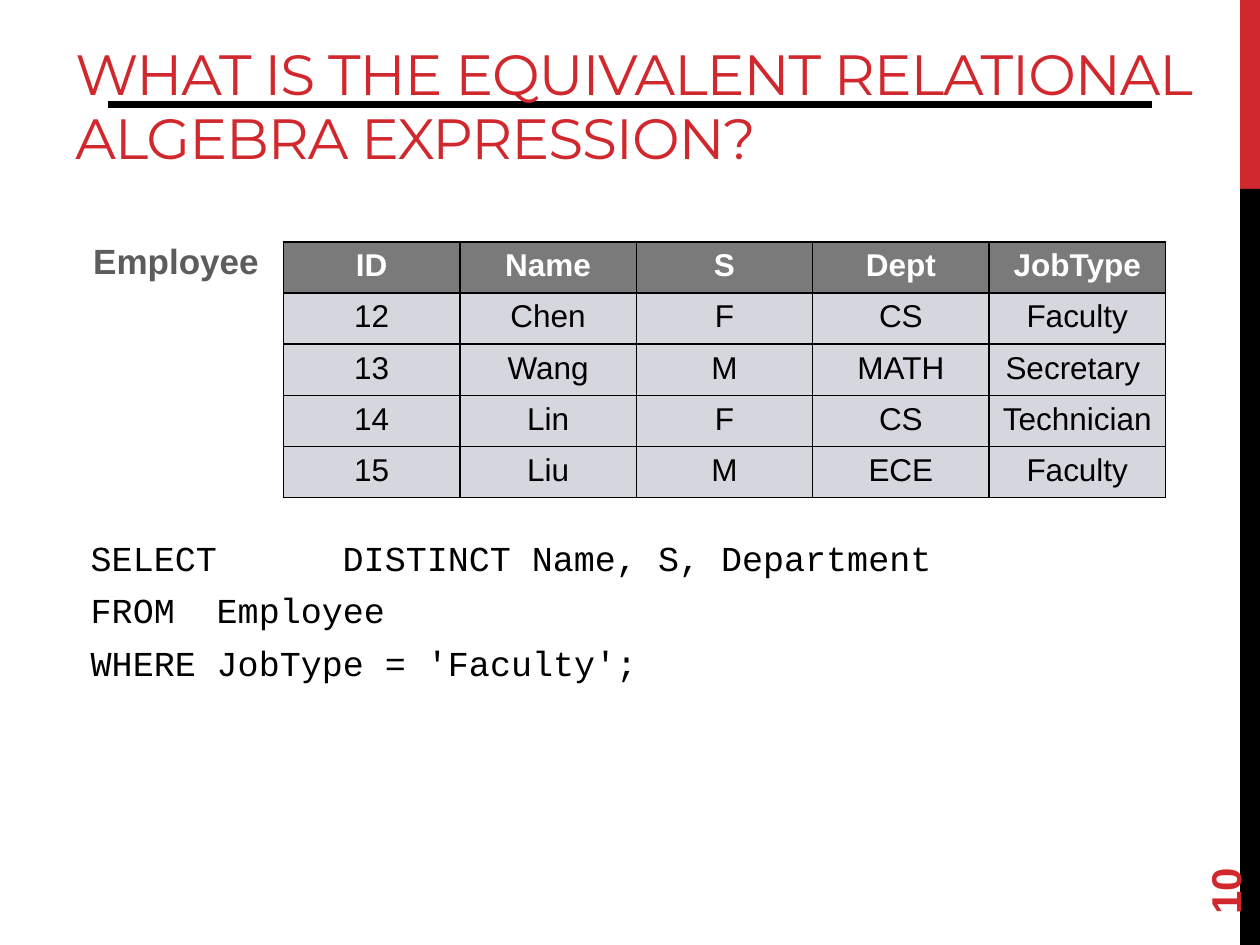
from lxml import etree
from pptx import Presentation
from pptx import util as u
from pptx.dml.color import RGBColor
from pptx.enum import shapes, text
from pptx.oxml import ns

RED = RGBColor(0xD1, 0x28, 0x2E)
BLACK = RGBColor(0, 0, 0)
WHITE = RGBColor(255, 255, 255)
LABEL_GRAY = RGBColor(0x5C, 0x5C, 0x5C)
HEADER_GRAY = RGBColor(0x7A, 0x7A, 0x7A)
ROW_GRAY = RGBColor(0xD6, 0xD7, 0xDE)

COLS, ROWS = 40, 30
EMPLOYEES = [
    ["ID", "Name", "S", "Dept", "JobType"],
    ["12", "Chen", "F", "CS", "Faculty"],
    ["13", "Wang", "M", "MATH", "Secretary "],
    ["14", "Lin", "F", "CS", "Technician"],
    ["15", "Liu", "M", "ECE", "Faculty"],
]
# Each query line with its tab stop in inches
QUERY = [
    ("SELECT\tDISTINCT Name, S, Department", 2),
    ("FROM\tEmployee", 1),
    ("WHERE\tJobType = 'Faculty';", 1),
]


def add_xml(parent, tag, **attrs):
    el = etree.SubElement(parent, ns.qn(tag))
    for name, value in attrs.items():
        el.set(name, str(value))
    return el


class Deck:
    """Holds the style and current slide; lengths are grid columns and rows."""

    def __init__(self):
        self.prs = Presentation()
        self.prs.slide_width, self.prs.slide_height = u.Inches(10), u.Inches(7.5)
        self.s = self.prs.slides.add_slide(self.prs.slide_layouts[6])

    def box(self, x, y, w, h):
        cw, rh = self.prs.slide_width / COLS, self.prs.slide_height / ROWS
        return [round(v) for v in (x * cw, y * rh, w * cw, h * rh)]

    def font(self, p, size, color, name="Arial", bold=False):
        for r in p.runs:
            f = r.font
            f.size, f.name, f.bold = u.Pt(size), name, bold
            f.color.rgb = color

    def bar(self, at, color):
        sp = self.s.shapes.add_shape(shapes.MSO_SHAPE.RECTANGLE, *self.box(*at))
        sp.shadow.inherit = False
        sp.fill.solid()
        sp.fill.fore_color.rgb = color
        sp.line.fill.background()

    def rule(self, x1, x2, y, width):
        left, top, length, _ = self.box(x1, y, x2 - x1, 0)
        line = self.s.shapes.add_connector(
            shapes.MSO_CONNECTOR.STRAIGHT, left, top, left + length, top)
        line.line.color.rgb = BLACK
        line.line.width = u.Pt(width)
        add_xml(line._element.spPr, "a:effectLst")

    def text(self, at, lines, size, color, name="Arial", bold=False,
             anchor=text.MSO_ANCHOR.TOP, inset=0.1):
        sp = self.s.shapes.add_textbox(*self.box(*at))
        tf = sp.text_frame
        tf.word_wrap = True
        tf.vertical_anchor = anchor
        tf.margin_left = tf.margin_right = u.Inches(inset)
        tf.margin_top = tf.margin_bottom = u.Inches(inset / 2)
        tf.text = "\n".join(lines)
        for p in tf.paragraphs:
            self.font(p, size, color, name, bold)
        return sp

    def title(self, at, line):
        sp = self.text(at, [line], 32.4, RED, "Montserrat",
                       anchor=text.MSO_ANCHOR.BOTTOM)
        p = sp.text_frame.paragraphs[0]
        p.line_spacing = 0.95
        p.runs[0].font._element.set("spc", "-60")

    def query(self, at, lines):
        sp = self.text(at, [line for line, _ in lines], 20, BLACK,
                       "Courier New", inset=0)
        for p, (_, stop) in zip(sp.text_frame.paragraphs, lines):
            p.space_before = p.space_after = u.Pt(2.4)
            p.line_spacing = 1.05
            tabs = add_xml(p._p.get_or_add_pPr(), "a:tabLst")
            add_xml(tabs, "a:tab", pos=u.Inches(stop), algn="l")

    def borders(self, cell):
        pr = cell._tc.get_or_add_tcPr()
        for i, side in enumerate(("lnL", "lnR", "lnT", "lnB")):
            ln = etree.Element(ns.qn("a:" + side), w=str(u.Pt(1)))
            add_xml(add_xml(ln, "a:solidFill"), "a:srgbClr", val=BLACK)
            pr.insert(i, ln)

    def table(self, at, data):
        t = self.s.shapes.add_table(len(data), len(data[0]), *self.box(*at)).table
        for i, row in enumerate(data):
            fill, color = (ROW_GRAY, BLACK) if i else (HEADER_GRAY, WHITE)
            for j, value in enumerate(row):
                cell = t.cell(i, j)
                cell.fill.solid()
                cell.fill.fore_color.rgb = fill
                cell.text_frame.text = value
                p = cell.text_frame.paragraphs[0]
                p.alignment = text.PP_ALIGN.CENTER
                self.font(p, 18, color, bold=i == 0)
                self.borders(cell)

    def page_number(self, at, number):
        sp = self.text(at, [number], 24, RED, bold=True,
                       anchor=text.MSO_ANCHOR.MIDDLE)
        sp.rotation = 270


def main():
    d = Deck()
    d.bar((39.37, 0, 0.63, 6), RED)
    d.bar((39.37, 6, 0.63, 24), BLACK)
    d.rule(3.44, 36.56, 3.32, 4)
    d.title((2, 1.68, 37.32, 4),
            "WHAT IS THE EQUIVALENT RELATIONAL ALGEBRA EXPRESSION?")
    d.text((2.96, 7.6, 6, 1.6), ["Employee"], 20, LABEL_GRAY, bold=True, inset=0)
    d.query((2.88, 16.96, 35, 5), QUERY)
    d.page_number((36, 25.76, 5.76, 1.6), "10")
    d.table((9, 7.68, 28, 8.12), EMPLOYEES)
    d.prs.save("out.pptx")


if __name__ == "__main__":
    main()
